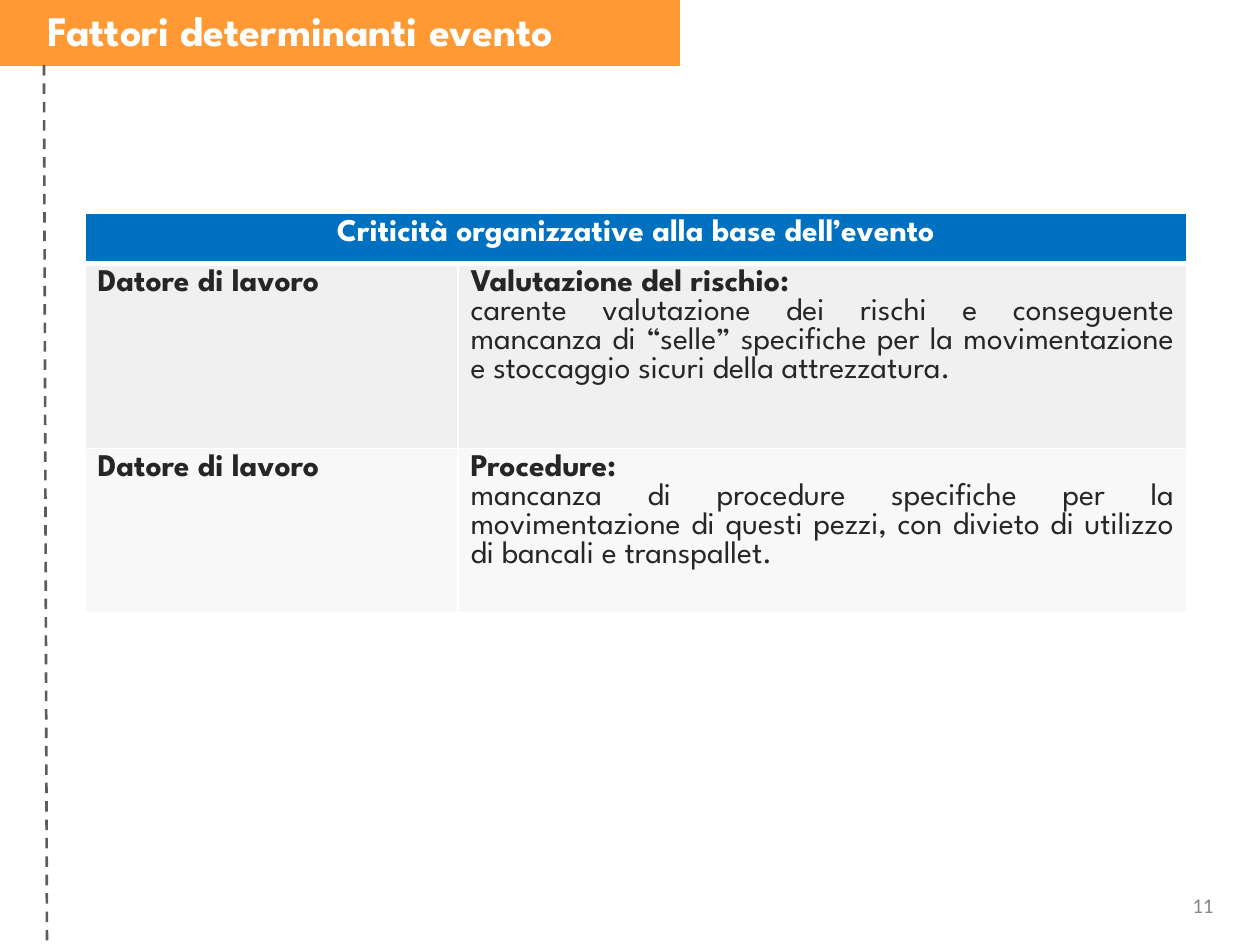
from lxml import etree
from pptx import Presentation
from pptx import util as u
from pptx.dml.color import RGBColor
from pptx.enum import dml, shapes, text
from pptx.oxml import ns

HUE = {
    "bar": "FF9933", "dash": "5C5C5C", "page": "898989", "white": "FFFFFF",
    "head": "0070C0", "odd": "F0F0F0", "even": "F8F8F8", "ink": "262626",
}
AL = text.PP_ALIGN
HEAD = "Criticità organizzative alla base dell’evento"
ROLE = "Datore di lavoro"
ROWS = [
    ("odd", "Valutazione del rischio:",
     "carente valutazione dei rischi e conseguente mancanza di “selle” specifiche "
     "per la movimentazione e stoccaggio sicuri della attrezzatura."),
    ("even", "Procedure:",
     "mancanza di procedure specifiche per la movimentazione di questi pezzi, "
     "con divieto di utilizzo di bancali e transpallet."),
]


def px(n):
    return u.Emu(round(n * 914400 / 126))


def rgb(key):
    return RGBColor.from_string(HUE[key])


class Deck:
    face = "League Spartan"

    def __init__(self, wide, high):
        self.prs = Presentation()
        self.prs.slide_width, self.prs.slide_height = px(wide), px(high)
        self.slide = self.prs.slides.add_slide(self.prs.slide_layouts[6])

    def fill_text(self, frame, lines, hue, align=AL.LEFT, **form):
        for i, (words, bold) in enumerate(lines):
            para = frame.add_paragraph() if i else frame.paragraphs[0]
            para.alignment = align
            run = para.add_run()
            run.text = words
            style = {"name": self.face, "bold": bold, **form}
            for key, val in style.items():
                setattr(run.font, key, val)
            run.font.color.rgb = rgb(hue)

    def bar(self, box, hue):
        rect = self.slide.shapes.add_shape(shapes.MSO_SHAPE.RECTANGLE, *map(px, box))
        rect.shadow.inherit = False
        rect.fill.solid()
        rect.fill.fore_color.rgb = rgb(hue)
        rect.line.fill.background()

    def dash(self, ends, hue):
        rule = self.slide.shapes.add_connector(
            shapes.MSO_CONNECTOR.STRAIGHT, *map(px, ends))
        form = {"width": u.Pt(1.5), "dash_style": dml.MSO_LINE.DASH}
        for key, val in form.items():
            setattr(rule.line, key, val)
        rule.line.color.rgb = rgb(hue)
        etree.SubElement(rule._element.spPr, ns.qn("a:effectLst"))

    def label(self, box, words, hue, anchor, bold=False, **form):
        frame = self.slide.shapes.add_textbox(*map(px, box)).text_frame
        frame.word_wrap = True
        frame.vertical_anchor = anchor
        self.fill_text(frame, [(words, bold)], hue, **form)

    def table(self, left, top, cols, rows):
        grid = self.slide.shapes.add_table(
            len(rows), len(cols), px(left), px(top), px(sum(cols)), px(sum(rows))).table
        for col, wide in zip(grid.columns, cols):
            col.width = px(wide)
        for row, high in zip(grid.rows, rows):
            row.height = px(high)
        return grid

    def cell(self, cell, lines, fill, hue="ink", align=AL.LEFT, **edge):
        props = cell._tc.get_or_add_tcPr()
        for side in "LRTB":
            line = etree.SubElement(
                props, ns.qn(f"a:ln{side}"), w=str(int(u.Pt(edge.get(side, 1)))))
            solid = etree.SubElement(line, ns.qn("a:solidFill"))
            etree.SubElement(solid, ns.qn("a:srgbClr"), val=HUE["white"])
        cell.fill.solid()
        cell.fill.fore_color.rgb = rgb(fill)
        self.fill_text(cell.text_frame, lines, hue, align, size=u.Pt(18))


def main():
    deck = Deck(1260, 945)
    deck.bar((-15, 0, 695, 66), "bar")
    deck.dash((44, 65, 47, 945), "dash")
    deck.label((1155, 886, 71, 53), "11", "page", text.MSO_ANCHOR.TOP,
               align=AL.RIGHT, name="Calibri", size=u.Pt(12))
    deck.label((35, -2, 987, 63), "Fattori determinanti evento", "white",
               text.MSO_ANCHOR.BOTTOM, bold=True, size=u.Pt(24))

    grid = deck.table(85, 213, (373, 729), (49, 185, 164))
    grid.cell(0, 0).merge(grid.cell(0, 1))
    deck.cell(grid.cell(0, 0), [(HEAD, True)], "head", "white", AL.CENTER, B=3)
    for i, (fill, title, body) in enumerate(ROWS, 1):
        edge = {"T": 3 if i == 1 else 1}
        deck.cell(grid.cell(i, 0), [(ROLE, True)], fill, **edge)
        deck.cell(grid.cell(i, 1), [(title, True), (body, False)], fill,
                  align=AL.JUSTIFY, **edge)
    deck.prs.save("out.pptx")


if __name__ == "__main__":
    main()
